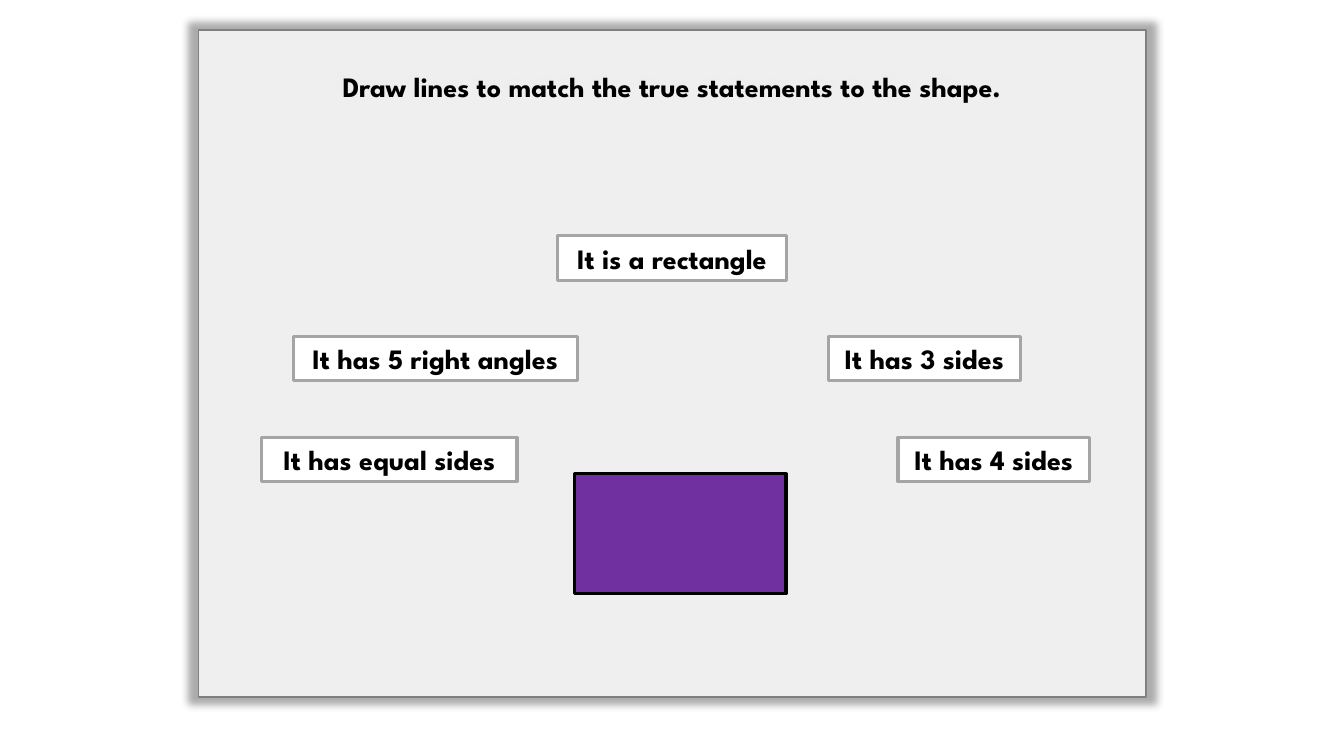
from lxml import etree
from pptx import Presentation
from pptx.dml.color import RGBColor
from pptx.enum import shapes, text
from pptx.oxml import ns
from pptx.util import Cm, Pt

# Content
INSTRUCTION = "Draw lines to match the true statements to the shape."
STATEMENTS = [  # wording, row, left (cm), width (cm)
    ("It has 5 right angles", 1, 7.39, 7.16),
    ("It is a rectangle", 0, 14.05, 5.77),
    ("It has 3 sides", 1, 20.88, 4.83),
    ("It has equal sides", 2, 6.6, 6.43),
    ("It has 4 sides", 2, 22.63, 4.83),
]
PANEL_BOX = (5, 0.76, 23.88, 16.81)
RECTANGLE_BOX = (14.48, 11.94, 5.33, 3.02)
FIRST_ROW, ROW_STEP, STATEMENT_HEIGHT = 5.94, 2.54, 1.12

# Style
FONT = "League Spartan"
WHITE = RGBColor(0xFF, 0xFF, 0xFF)
BLACK = RGBColor(0, 0, 0)
PURPLE = RGBColor(0x70, 0x30, 0xA0)
PANEL_EDGE = RGBColor(0x80, 0x80, 0x80)
STATEMENT_EDGE = RGBColor(0xA5, 0xA5, 0xA5)


def add_box(parent, box, fill, edge, edge_width):
    rect = parent.add_shape(shapes.MSO_SHAPE.RECTANGLE, *map(Cm, box))
    rect.shadow.inherit = False
    rect.fill.solid()
    rect.fill.fore_color.rgb = fill
    rect.line.color.rgb = edge
    rect.line.width = Pt(edge_width)
    return rect


def write(rect, wording):
    paragraph = rect.text_frame.paragraphs[0]
    paragraph.alignment = text.PP_ALIGN.CENTER
    run = paragraph.add_run()
    run.text = wording
    run.font.name = FONT
    run.font.size = Pt(20)
    run.font.bold = True
    run.font.color.rgb = BLACK


def add_child(parent, tag, **attributes):
    return etree.SubElement(parent, ns.qn(tag), attributes)


prs = Presentation()
prs.slide_width, prs.slide_height = Cm(33.87), Cm(19.05)
slide = prs.slides.add_slide(prs.slide_layouts[6])

# Panel with the instruction, see-through over a soft glow
panel = add_box(slide.shapes, PANEL_BOX, WHITE, PANEL_EDGE, 1)
panel.text_frame.word_wrap = True
panel.text_frame.vertical_anchor = text.MSO_ANCHOR.TOP
panel.text_frame.margin_top = Cm(0.99)
write(panel, INSTRUCTION)

panel_properties = panel.fill._xPr
panel_colour = panel_properties.find(ns.qn("a:solidFill"))[0]
add_child(panel_colour, "a:alpha", val="82000")
glow = add_child(panel_properties.find(ns.qn("a:effectLst")), "a:outerShdw",
                 blurRad=str(Pt(5)), sx="102000", sy="102000",
                 algn="ctr", rotWithShape="0")
add_child(add_child(glow, "a:srgbClr", val=str(BLACK)), "a:alpha", val="40000")

# Rectangle and the statements around it
matching = slide.shapes.add_group_shape().shapes
add_box(matching, RECTANGLE_BOX, PURPLE, BLACK, 2.25)
for wording, row, left, width in STATEMENTS:
    box = (left, FIRST_ROW + row * ROW_STEP, width, STATEMENT_HEIGHT)
    statement = add_box(matching, box, WHITE, STATEMENT_EDGE, 2.25)
    statement.text_frame.word_wrap = False
    statement.text_frame.auto_size = text.MSO_AUTO_SIZE.SHAPE_TO_FIT_TEXT
    statement.text_frame.vertical_anchor = text.MSO_ANCHOR.MIDDLE
    write(statement, wording)

prs.save("out.pptx")
